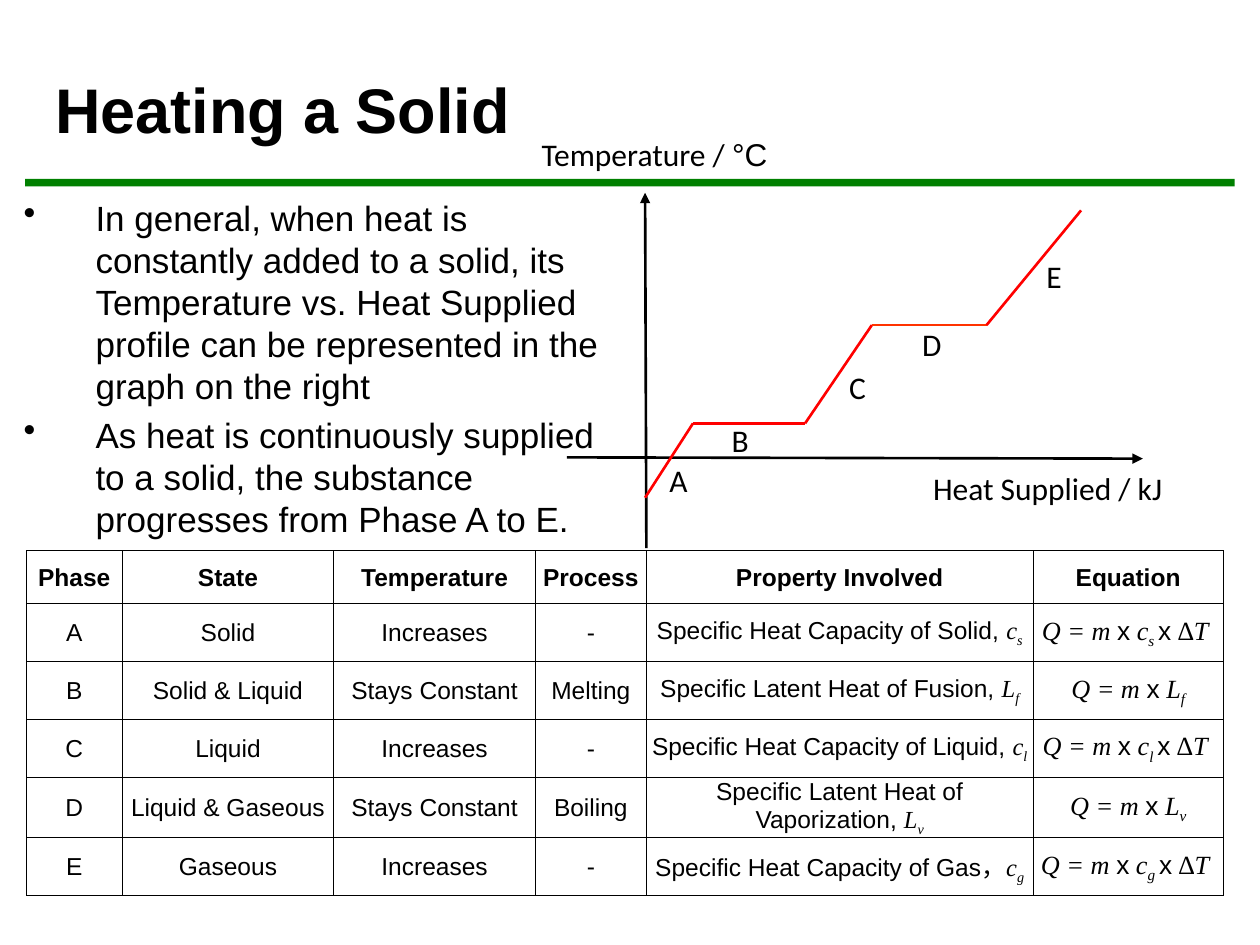
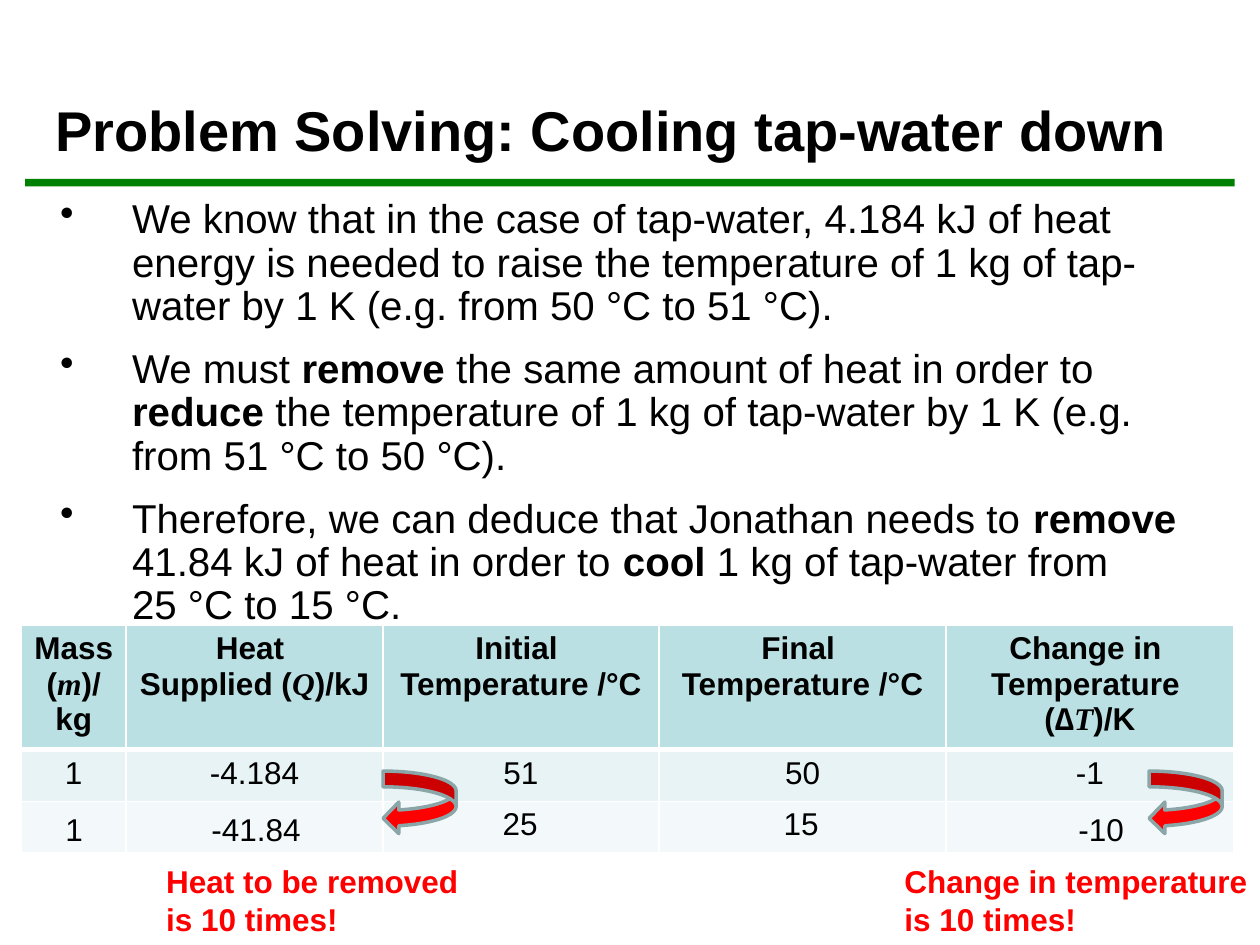
import itertools

import lxml.etree
import pptx
import pptx.dml.color
import pptx.enum.shapes
import pptx.enum.text
import pptx.oxml.ns
import pptx.util

Inches = pptx.util.Inches
Pt = pptx.util.Pt
RGB = pptx.dml.color.RGBColor.from_string
qn = pptx.oxml.ns.qn
ALIGN = pptx.enum.text.PP_ALIGN
ANCHOR = pptx.enum.text.MSO_ANCHOR
SHAPE = pptx.enum.shapes.MSO_SHAPE

THEME = {
    "ink": "000000", "rule": "008000", "curve": "FF0000", "boil": "FF3300",
    "header": "BBE0E3", "band": "E7F3F4", "last_band": "F3F9FA",
    "white": "FFFFFF", "arrow_edge": "8AA6A8",
    "title": {"name": "Arial", "size": Pt(36), "bold": True},
    "long_title": {"name": "Arial", "size": Pt(32), "bold": True},
    "body": {"name": "Arial", "size": Pt(20)},
    "large_body": {"name": "Arial", "size": Pt(23)},
    "graph": {"name": "Calibri", "size": Pt(18)},
    "value": {"name": "Arial", "size": Pt(18)},
    "head": {"name": "Arial", "size": Pt(18), "bold": True},
    "callout": {"name": "Arial", "size": Pt(18), "bold": True, "color": "FF0000"},
    "phase": {"name": "Arial", "size": Pt(14)},
    "phase_head": {"name": "Arial", "size": Pt(14), "bold": True},
    "equation": {"name": "Arial", "size": Pt(15)},
    # Run styles, laid over the style of the box or cell
    "strong": {"bold": True},
    "plain": {"name": "Arial"},
    "slanted": {"italic": True},
    "symbol": {"name": "Times New Roman", "italic": True},
    "subscript": {"name": "Times New Roman", "italic": True, "baseline": -25000},
}


def write(frame, paragraphs, style, layout):
    """Fill a text frame; a paragraph is a string or a list of (text, run style)."""
    for index, content in enumerate(paragraphs):
        paragraph = frame.paragraphs[0] if index == 0 else frame.add_paragraph()
        if "bullet" in layout:
            properties = paragraph._p.get_or_add_pPr()
            properties.set("marL", str(Inches(0.57)))
            properties.set("indent", str(-Inches(0.57)))
            bullet = lxml.etree.SubElement(properties, qn("a:buChar"))
            bullet.set("char", layout["bullet"])
        for name in ("alignment", "line_spacing", "space_before"):
            if name in layout and (name != "space_before" or index > 0):
                setattr(paragraph, name, layout[name])
        for text, run_style in [(content, None)] if isinstance(content, str) else content:
            if text == "\n":
                paragraph.add_line_break()
                continue
            run = paragraph.add_run()
            run.text = text
            values = {"color": THEME["ink"], **THEME[style], **THEME.get(run_style, {})}
            run.font.color.rgb = RGB(values.pop("color"))
            if "baseline" in values:
                run._r.get_or_add_rPr().set("baseline", str(values.pop("baseline")))
            for name, value in values.items():
                setattr(run.font, name, value)


def style_cell(cell, fill, border, widths):
    """Set the fill and the left, right, top and bottom borders of a cell."""
    properties = cell._tc.get_or_add_tcPr()
    for side, width in zip("LRTB", widths):
        line = lxml.etree.SubElement(properties, qn("a:ln" + side), w=str(Pt(width)))
        solid = lxml.etree.SubElement(line, qn("a:solidFill"))
        lxml.etree.SubElement(solid, qn("a:srgbClr"), val=border)
    if fill:
        cell.fill.solid()
        cell.fill.fore_color.rgb = RGB(fill)
    else:
        cell.fill.background()


presentation = pptx.Presentation()
presentation.slide_width = Inches(10)
presentation.slide_height = Inches(7.5)

# Both slides carry a green rule under the title
for _ in range(2):
    slide = presentation.slides.add_slide(presentation.slide_layouts[6])
    rule = slide.shapes.add_shape(
        SHAPE.RECTANGLE, Inches(0.2), Inches(1.42), Inches(9.6), Inches(0.06))
    rule.shadow.inherit = False
    rule.fill.solid()
    rule.fill.fore_color.rgb = RGB(THEME["rule"])
    rule.line.fill.background()
heating_slide, cooling_slide = presentation.slides

# Heating curve: axes, then one segment for each phase A to E
curve_points = [(5.12, 3.95), (5.5, 3.36), (6.39, 3.36),
                (6.92, 2.58), (7.83, 2.58), (8.58, 1.67)]
segment_colors = ["curve", "curve", "curve", "boil", "curve"]
lines = [((5.12, 1.53), (5.13, 4.35), "ink", True),
         ((9.07, 3.64), (4.5, 3.63), "ink", True)]
for (start, end), color in zip(itertools.pairwise(curve_points), segment_colors):
    lines.append((start, end, color, False))
for start, end, color, has_arrow in lines:
    connector = heating_slide.shapes.add_connector(
        pptx.enum.shapes.MSO_CONNECTOR.STRAIGHT, *map(Inches, start + end))
    connector.line.color.rgb = RGB(THEME[color])
    connector.line.width = Pt(1.5)
    shape_properties = connector._element.spPr
    if has_arrow:
        lxml.etree.SubElement(
            shape_properties.find(qn("a:ln")), qn("a:headEnd"), type="triangle")
    lxml.etree.SubElement(shape_properties, qn("a:effectLst"))

# Phase table: a heat capacity phase has a temperature change, a latent heat phase has none
phases = [
    ("A", "Solid", "-", "Specific Heat Capacity of Solid, ", "c", "s"),
    ("B", "Solid & Liquid", "Melting", "Specific Latent Heat of Fusion, ", "L", "f"),
    ("C", "Liquid", "-", "Specific Heat Capacity of Liquid, ", "c", "l"),
    ("D", "Liquid & Gaseous", "Boiling", "Specific Latent Heat of Vaporization, ", "L", "v"),
    ("E", "Gaseous", "-", "Specific Heat Capacity of Gas，", "c", "g"),
]
phase_rows = [["Phase", "State", "Temperature", "Process", "Property Involved", "Equation"]]
for phase, state, process, wording, symbol, subscript in phases:
    equation = [("Q = m ", "symbol"), ("x", "plain"), (" " + symbol, "symbol")]
    if symbol == "c":
        temperature = "Increases"
        equation += [(subscript + " ", "subscript"), ("x", "plain"), (" ∆T ", "symbol")]
    else:
        temperature = "Stays Constant"
        equation.append((subscript, "subscript"))
    wording = [(wording, "plain"), (symbol, "symbol"), (subscript, "subscript")]
    phase_rows.append([phase, state, temperature, process, wording, equation])

# Cooling table: the values of its last row are set in text boxes over it
cooling_rows = [
    [[[("Mass (", None), ("m", "symbol"), (")/ kg", None)]],
     ["Heat ", [("Supplied (", None), ("Q", "symbol"), (")/kJ", None)]],
     ["Initial ", "Temperature /°C"],
     ["Final ", "Temperature /°C"],
     ["Change in ", "Temperature ",
      [("(", None), ("∆", "slanted"), ("T", "symbol"), (")/K", None)]]],
    [["1"], ["-4.184"], ["51"], ["50"], ["-1"]],
    [[]] * 5,
]

phase_table = heating_slide.shapes.add_table(
    6, 6, Inches(0.21), Inches(4.37), Inches(9.5), Inches(2.72)).table
cooling_table = cooling_slide.shapes.add_table(
    3, 5, Inches(0.17), Inches(4.96), Inches(9.62), Inches(1.81)).table
for table, widths, heights in [
    (phase_table, [0.76, 1.68, 1.6, 0.88, 3.07, 1.51], [0.42] + [0.46] * 5),
    (cooling_table, [0.83, 2.04, 2.19, 2.28, 2.28], [0.99, 0.41, 0.41]),
]:
    table.first_row = table.horz_banding = False
    for column, width in zip(table.columns, widths):
        column.width = Inches(width)
    for row, height in zip(table.rows, heights):
        row.height = Inches(height)

centered = {"alignment": ALIGN.CENTER}
for row_index, row in enumerate(phase_rows):
    for column_index, content in enumerate(row):
        cell = phase_table.cell(row_index, column_index)
        cell.vertical_anchor = ANCHOR.MIDDLE
        cell.margin_left = cell.margin_right = cell.margin_top = Inches(0.01)
        cell.margin_bottom = 0
        style = "phase"
        if row_index == 0:
            style = "phase_head"
        elif column_index == 5:
            style = "equation"
        write(cell.text_frame, [content], style, centered)
        style_cell(cell, None, THEME["ink"], [0.5] * 4)

row_fills = ["header", "band", "last_band"]
for row_index, row in enumerate(cooling_rows):
    for column_index, paragraphs in enumerate(row):
        cell = cooling_table.cell(row_index, column_index)
        write(cell.text_frame, paragraphs, "value" if row_index else "head", centered)
        top, bottom = [(1, 3), (3, 1), (1, 1)][row_index]
        style_cell(cell, THEME[row_fills[row_index]], THEME["white"], [1, 1, top, bottom])

# Curved arrows from one cooling row to the next
for left in (3.04, 9.12):
    arrow = cooling_slide.shapes.add_shape(
        SHAPE.CURVED_LEFT_ARROW, Inches(left), Inches(6.12), Inches(0.58), Inches(0.5))
    arrow.shadow.inherit = False
    arrow.fill.solid()
    arrow.fill.fore_color.rgb = RGB(THEME["curve"])
    arrow.line.color.rgb = RGB(THEME["arrow_edge"])
    arrow.line.width = Pt(2)

# Text boxes: slide, (left, top, width, height), paragraphs, style, layout, frame format
bottom_anchored = {"word_wrap": True, "vertical_anchor": ANCHOR.BOTTOM}
bulleted = {"word_wrap": True, "margin_top": Inches(0.08)}
wrapped = {"word_wrap": True}
unwrapped = {"word_wrap": False}
text_boxes = [
    (heating_slide, (0.34, 0.22, 9.37, 0.99), ["Heating a Solid"],
     "title", {}, bottom_anchored),
    (heating_slide, (0.09, 1.48, 4.87, 2.86), [
        "In general, when heat is constantly added to a solid, its Temperature vs. "
        "Heat Supplied profile can be represented in the graph on the right",
        "As heat is continuously supplied to a solid, the substance progresses "
        "from Phase A to E.",
    ], "body", {"bullet": "•", "space_before": Pt(4)}, bulleted),
    (heating_slide, (7.27, 3.67, 2.09, 0.4), ["Heat Supplied / kJ"],
     "graph", centered, wrapped),
    (heating_slide, (4.2, 1.02, 2.06, 0.4),
     [[("Temperature / ", None), ("°C ", "plain")]], "graph", centered, wrapped),
    (cooling_slide, (0.34, 0.17, 9.37, 1.17), ["Problem Solving: Cooling tap-water down"],
     "long_title", {}, bottom_anchored),
    (cooling_slide, (0.38, 1.5, 9.17, 3.58), [
        "We know that in the case of tap-water, 4.184 kJ of heat energy is needed to raise "
        "the temperature of 1 kg of tap-water by 1 K (e.g. from 50 °C to 51 °C).",
        [("We must ", None), ("remove", "strong"),
         (" the same amount of heat in order to ", None), ("reduce", "strong"),
         (" the temperature of 1 kg of tap-water by 1 K (e.g. from 51 °C to 50 °C).", None)],
        [("Therefore, we can deduce that Jonathan needs to ", None), ("remove", "strong"),
         (" 41.84 kJ of heat in order to ", None), ("cool", "strong"),
         (" 1 kg of tap-water from ", None), ("\n", None), ("25 °C to 15 °C.", None)],
    ], "large_body", {"bullet": "•", "line_spacing": 0.9, "space_before": Pt(11)}, bulleted),
]
for label, left, top in [("A", 5.01, 3.61), ("B", 5.5, 3.29), ("C", 6.43, 2.87),
                         ("D", 7.02, 2.53), ("E", 7.99, 1.99)]:
    text_boxes.append(
        (heating_slide, (left, top, 0.75, 0.4), [label], "graph", centered, wrapped))
for value, left, top, width in [("1", 0.42, 6.38, 0.34), ("-41.84", 1.58, 6.38, 0.92),
                                ("25", 3.89, 6.33, 0.48), ("15", 6.12, 6.33, 0.48),
                                ("-10", 8.46, 6.38, 0.57)]:
    text_boxes.append(
        (cooling_slide, (left, top, width, 0.4), [value], "value", {}, unwrapped))
for quantity, left, width in [("Heat to be removed", 1.22, 2.61),
                              ("Change in temperature", 7.08, 2.95)]:
    text_boxes.append((cooling_slide, (left, 6.79, width, 0.71),
                       [quantity, "is 10 times!"], "callout", {}, unwrapped))

for slide, box, paragraphs, style, layout, frame_format in text_boxes:
    frame = slide.shapes.add_textbox(*map(Inches, box)).text_frame
    for name, value in frame_format.items():
        setattr(frame, name, value)
    write(frame, paragraphs, style, layout)

presentation.save("out.pptx")
